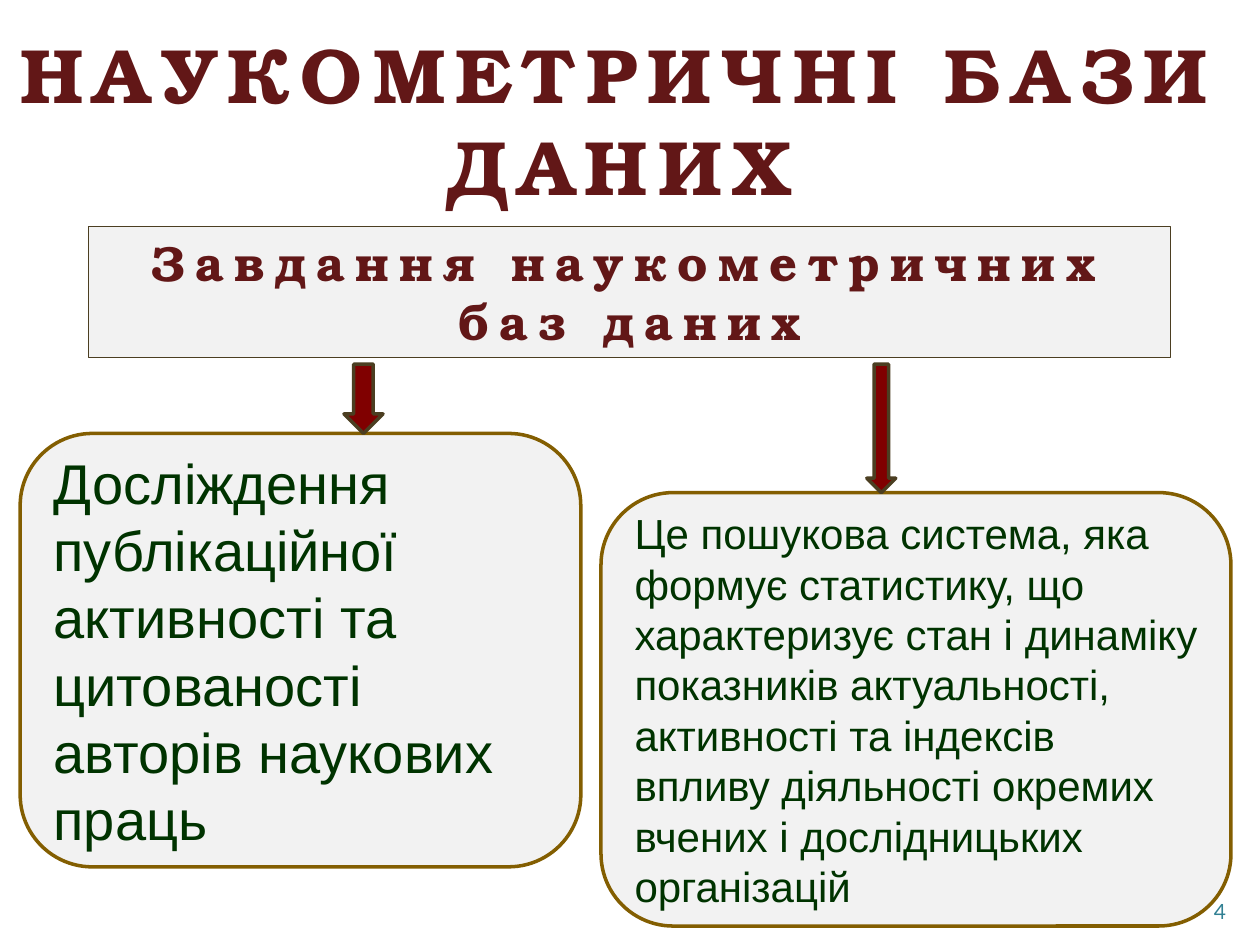
from dataclasses import dataclass

from pptx import Presentation
from pptx import util as u
from pptx.dml.color import RGBColor
from pptx.enum import shapes, text


@dataclass(frozen=True)
class Theme:
    heading_font: str = "TeX Gyre Bonum"
    body_font: str = "Arial"
    number_font: str = "Lato"
    heading: str = "621717"
    body: str = "003300"
    number: str = "318093"
    panel: str = "F2F2F2"
    panel_line: str = "835E01"
    dark_line: str = "4B3E21"
    arrow: str = "800000"
    title_size: int = 44
    task_size: int = 28
    number_size: int = 12
    spacing: int = 6


THEME = Theme()
WIDTH, HEIGHT = 10, 7.5

# Content
TITLE = "НАУКОМЕТРИЧНІ БАЗИ ДАНИХ"
TASK = "Завдання наукометричних баз даних"
PAGE_NUMBER = "4"
# Each goal: wording, type size, panel left, top and width, arrow left and width
GOALS = [
    ("Досліждення публікаційної активності та цитованості авторів наукових праць",
     32, 0.16, 3.44, 4.45, 2.73, 0.31),
    ("Це пошукова система, яка формує статистику, що характеризує стан і динаміку "
     "показників актуальності, активності та індексів впливу діяльності окремих "
     "вчених і дослідницьких організацій",
     24, 4.77, 3.91, 5, 6.88, 0.23),
]

# Layout
TITLE_BOX = (0, 0.16, 9.84, 1.58)
TASK_BOX = (0.7, 1.8, 8.59, 1.04)
NUMBER_BOX = (9, 7.08, 0.83, 0.27)
PANEL_HEIGHT = 3.44
ARROW_TOP = 2.89


def inches(box):
    return [u.Inches(length) for length in box]


def write(holder, wording, font, size, color, align, anchor, bold=False, spacing=0):
    frame = holder.text_frame
    frame.word_wrap = True
    frame.auto_size = text.MSO_AUTO_SIZE.NONE
    frame.vertical_anchor = anchor
    paragraph = frame.paragraphs[0]
    paragraph.alignment = align
    run = paragraph.add_run()
    run.text = wording
    run.font.name = font
    run.font.size = u.Pt(size)
    run.font.bold = bold
    run.font.color.rgb = RGBColor.from_string(color)
    if spacing:
        run.font._element.set("spc", str(spacing * 100))


def write_heading(holder, wording, size):
    write(holder, wording, THEME.heading_font, size, THEME.heading,
          text.PP_ALIGN.CENTER, text.MSO_ANCHOR.TOP, True, THEME.spacing)


def add_block(slide, preset, box, fill, line, line_width):
    block = slide.shapes.add_shape(preset, *inches(box))
    block.shadow.inherit = False
    block.fill.solid()
    block.fill.fore_color.rgb = RGBColor.from_string(fill)
    block.line.color.rgb = RGBColor.from_string(line)
    block.line.width = u.Pt(line_width)
    return block


def main():
    deck = Presentation()
    deck.slide_width, deck.slide_height = inches((WIDTH, HEIGHT))
    slide = deck.slides.add_slide(deck.slide_layouts[5])
    preset = shapes.MSO_SHAPE

    # Title
    title = slide.shapes.title
    title.left, title.top, title.width, title.height = inches(TITLE_BOX)
    write_heading(title, TITLE, THEME.title_size)

    # Goal panels
    for wording, size, left, top, width, _, _ in GOALS:
        panel = add_block(slide, preset.ROUNDED_RECTANGLE, (left, top, width, PANEL_HEIGHT),
                          THEME.panel, THEME.panel_line, 2)
        write(panel, wording, THEME.body_font, size, THEME.body,
              text.PP_ALIGN.LEFT, text.MSO_ANCHOR.MIDDLE)

    # Task heading
    task = add_block(slide, preset.RECTANGLE, TASK_BOX, THEME.panel, THEME.dark_line, 0.75)
    write_heading(task, TASK, THEME.task_size)

    # Arrows reach from the task down to each panel
    for _, _, _, panel_top, _, left, width in GOALS:
        add_block(slide, preset.DOWN_ARROW, (left, ARROW_TOP, width, panel_top - ARROW_TOP),
                  THEME.arrow, THEME.dark_line, 2)

    # Page number
    number = slide.shapes.add_textbox(*inches(NUMBER_BOX))
    write(number, PAGE_NUMBER, THEME.number_font, THEME.number_size, THEME.number,
          text.PP_ALIGN.RIGHT, text.MSO_ANCHOR.TOP)

    deck.save("out.pptx")


if __name__ == "__main__":
    main()
